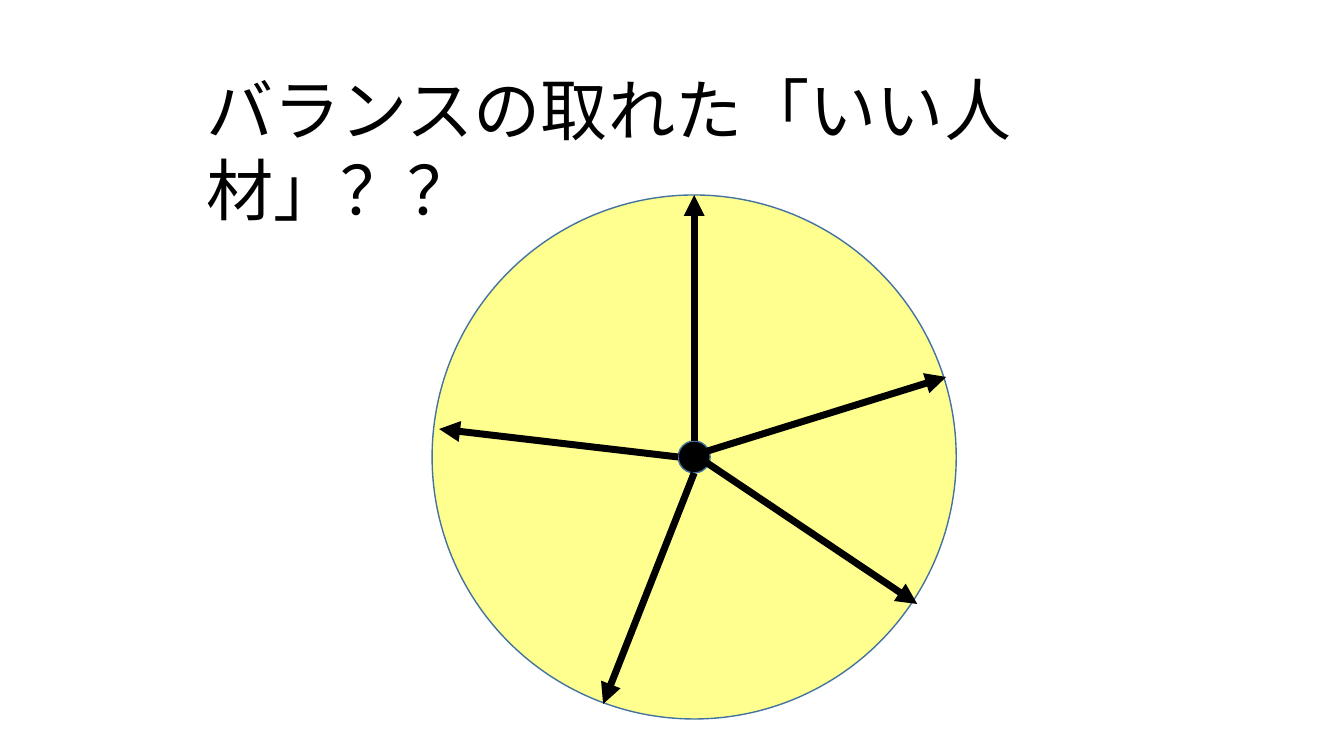
from lxml.etree import SubElement
from pptx import Presentation
from pptx.dml.color import RGBColor
from pptx.enum.shapes import MSO_CONNECTOR, MSO_SHAPE
from pptx.enum.text import MSO_ANCHOR, MSO_AUTO_SIZE, PP_ALIGN
from pptx.oxml.ns import qn
from pptx.util import Emu, Inches, Pt

TITLE = "バランスの取れた「いい人材」？？"
TITLE_BOX = (196, 63, 997, 92)
CENTER = (694, 457)
WHEEL_RADIUS, HUB_RADIUS = 262, 16
# Each spoke runs from the hub to its tip, in px
SPOKES = [
    ((694, 441), (694, 195)),
    ((685, 458), (946, 377)),
    ((678, 457), (439, 429)),
    ((694, 473), (603, 704)),
    ((698, 457), (917, 604)),
]
COLORS = {"wheel": "FFFF00", "ink": "000000", "outline": "43739E"}
WHEEL_OPACITY = 44


def px(length):
    return Emu(round(length * 914400 / 100.8))


def color(part):
    return RGBColor.from_string(COLORS[part])


def add_disc(slide, radius, part):
    """Draw a circle around the common center."""
    x, y = CENTER
    disc = slide.shapes.add_shape(
        MSO_SHAPE.OVAL, px(x - radius), px(y - radius), px(2 * radius), px(2 * radius))
    disc.shadow.inherit = False
    disc.fill.solid()
    disc.fill.fore_color.rgb = color(part)
    disc.line.color.rgb = color("outline")
    disc.line.width = Pt(1)
    return disc


def add_spoke(slide, start, tip):
    spoke = slide.shapes.add_connector(
        MSO_CONNECTOR.STRAIGHT, *(px(value) for value in (*start, *tip)))
    spoke.line.color.rgb = color("ink")
    spoke.line.width = Pt(5)
    SubElement(spoke.line._get_or_add_ln(), qn("a:tailEnd"), type="triangle")
    SubElement(spoke._element.spPr, qn("a:effectLst"))


def set_title(slide):
    title = slide.shapes.title
    title.left, title.top, title.width, title.height = map(px, TITLE_BOX)
    frame = title.text_frame
    frame.text = TITLE
    frame.word_wrap = True
    frame.auto_size = MSO_AUTO_SIZE.NONE
    frame.vertical_anchor = MSO_ANCHOR.TOP
    heading = frame.paragraphs[0]
    heading.alignment = PP_ALIGN.LEFT
    heading.font.size = Pt(48)
    heading.font.name = "Calibri"
    heading.font.color.rgb = color("ink")


def main():
    deck = Presentation()
    deck.slide_width, deck.slide_height = Inches(13.33), Inches(7.5)
    slide = deck.slides.add_slide(deck.slide_layouts[5])
    set_title(slide)
    wheel = add_disc(slide, WHEEL_RADIUS, "wheel")
    wheel_color = wheel._element.spPr.find(qn("a:solidFill"))[0]
    SubElement(wheel_color, qn("a:alpha"), val=str(WHEEL_OPACITY * 1000))
    add_disc(slide, HUB_RADIUS, "ink")
    for start, tip in SPOKES:
        add_spoke(slide, start, tip)
    deck.save("out.pptx")


if __name__ == "__main__":
    main()
